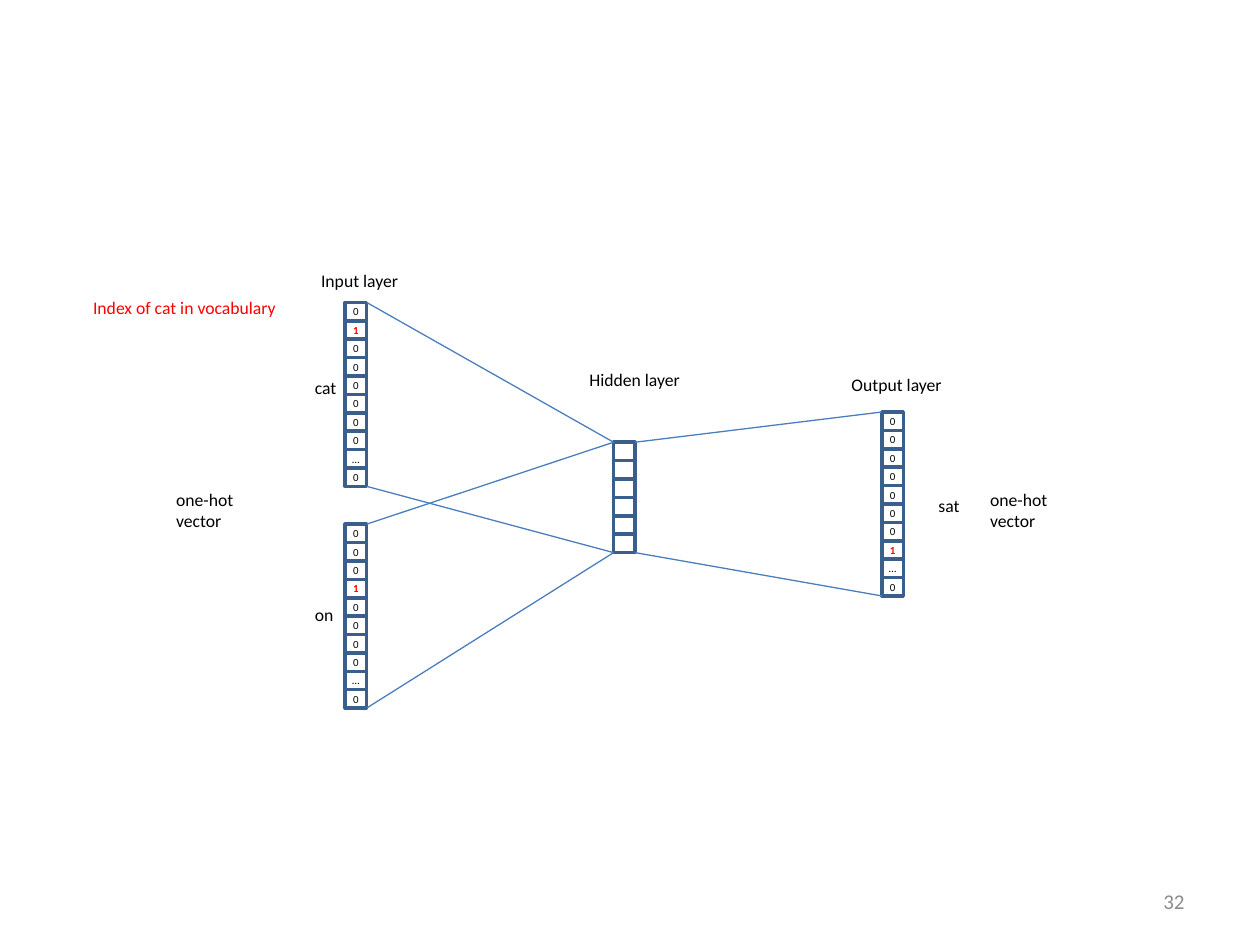
import pptx
import pptx.dml.color
import pptx.enum.shapes
import pptx.enum.text
import pptx.oxml
import pptx.util
from pptx.util import Inches

COLORS = {
    "text": "000000",
    "hot": "FF0000",
    "cell": "3A5F8C",
    "link": "4B7EBC",
    "number": "8C8C8C",
}
CELL_WIDTH = 0.17
CELL_HEIGHT = 1.46 / 10  # ten cells make a full vector


def color(name):
    return pptx.dml.color.RGBColor.from_string(COLORS[name])


def write(shape, text, size, color_name, alignment, bold=False):
    frame = shape.text_frame
    frame.text = text
    for para in frame.paragraphs:
        para.alignment = alignment
        para.font.name = "Calibri"
        para.font.size = pptx.util.Pt(size)
        para.font.bold = bold
        para.font.color.rgb = color(color_name)
    return frame


ALIGN = pptx.enum.text.PP_ALIGN
MIDDLE = pptx.enum.text.MSO_ANCHOR.MIDDLE

deck = pptx.Presentation()
deck.slide_width = Inches(10)
deck.slide_height = Inches(7.5)
page = deck.slides.add_slide(deck.slide_layouts[6])

# Slide number
box = page.shapes.add_textbox(Inches(7.17), Inches(6.95), Inches(2.33), Inches(0.4))
frame = write(box, "32", 12, "number", ALIGN.RIGHT)
frame.word_wrap = True
frame.vertical_anchor = MIDDLE

# Vectors: left, top, one value per cell
vectors = {
    "cat": (2.74, 2.4, "01000000…0"),
    "on": (2.74, 4.16, "00010000…0"),
    "hidden": (4.87, 3.51, " " * 6),
    "sat": (7, 3.27, "00000001…0"),
}
for left, top, values in vectors.values():
    group = page.shapes.add_group_shape()
    for row, value in enumerate(values):
        cell = group.shapes.add_shape(
            pptx.enum.shapes.MSO_SHAPE.RECTANGLE,
            Inches(left), Inches(top + row * CELL_HEIGHT),
            Inches(CELL_WIDTH), Inches(CELL_HEIGHT),
        )
        cell.shadow.inherit = False
        cell.fill.background()
        cell.line.color.rgb = color("cell")
        cell.line.width = pptx.util.Pt(2)
        if value == " ":
            continue
        hot = value == "1"
        frame = write(cell, value, 6.2, "hot" if hot else "text", ALIGN.CENTER, hot)
        frame.margin_left = frame.margin_right = 0
        frame.margin_top = frame.margin_bottom = 0
        frame.vertical_anchor = MIDDLE
        frame.word_wrap = False

# Links join the top and bottom corners of neighbouring vectors
for source, target in (("cat", "hidden"), ("on", "hidden"), ("hidden", "sat")):
    source_left, source_top, source_values = vectors[source]
    target_left, target_top, target_values = vectors[target]
    for end in (0, 1):
        link = page.shapes.add_connector(
            pptx.enum.shapes.MSO_CONNECTOR.STRAIGHT,
            Inches(source_left + CELL_WIDTH),
            Inches(source_top + end * len(source_values) * CELL_HEIGHT),
            Inches(target_left),
            Inches(target_top + end * len(target_values) * CELL_HEIGHT),
        )
        link.line.color.rgb = color("link")
        link.line.width = pptx.util.Pt(0.75)
        link.element.spPr.append(pptx.oxml.parse_xml(
            '<a:effectLst xmlns:a="http://schemas.openxmlformats.org/drawingml/2006/main"/>'
        ))

# Labels: text, left, top, width, height, colour
labels = [
    ("cat", 2.4, 2.94, 0.38, 0.27, "text"),
    ("on", 2.4, 4.74, 0.35, 0.27, "text"),
    ("sat", 7.35, 3.88, 0.37, 0.27, "text"),
    ("Input layer", 2.45, 2.09, 0.83, 0.27, "text"),
    ("Hidden layer", 4.58, 2.88, 0.94, 0.27, "text"),
    ("Output layer", 6.66, 2.92, 0.93, 0.27, "text"),
    ("one-hot\nvector", 1.3, 3.83, 0.66, 0.44, "text"),
    ("one-hot\nvector", 7.76, 3.83, 0.66, 0.44, "text"),
    ("Index of cat in vocabulary", 0.64, 2.31, 1.68, 0.27, "hot"),
]
for text, left, top, width, height, color_name in labels:
    box = page.shapes.add_textbox(Inches(left), Inches(top), Inches(width), Inches(height))
    frame = write(box, text, 10.1, color_name, ALIGN.LEFT)
    frame.word_wrap = False
    frame.auto_size = pptx.enum.text.MSO_AUTO_SIZE.SHAPE_TO_FIT_TEXT

deck.save("out.pptx")
